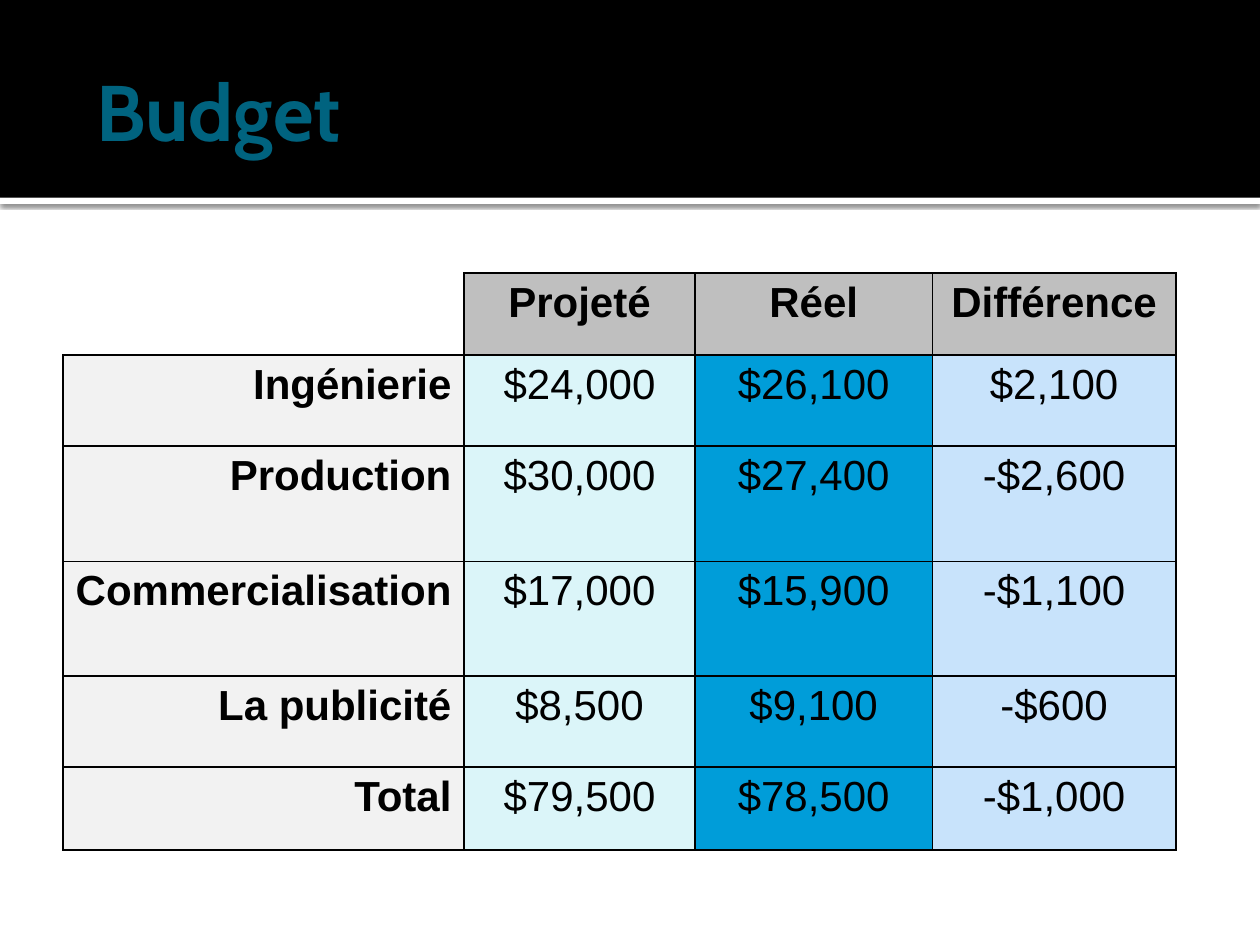
"""Build the budget slide: a black title band above a bordered cost table."""
from dataclasses import dataclass

import pptx
import pptx.dml.color
import pptx.enum.shapes
import pptx.enum.text
import pptx.oxml
import pptx.oxml.ns
import pptx.util
from pptx.dml.color import RGBColor
from pptx.util import Pt

BLACK = RGBColor(0x00, 0x00, 0x00)
WHITE = RGBColor(0xFF, 0xFF, 0xFF)
TEAL = RGBColor(0x00, 0x63, 0x7F)
HEADER_GREY = RGBColor(0xBF, 0xBF, 0xBF)
LABEL_GREY = RGBColor(0xF2, 0xF2, 0xF2)
PALE_CYAN = RGBColor(0xDB, 0xF5, 0xF9)
BLUE = RGBColor(0x00, 0x9D, 0xD9)
PALE_BLUE = RGBColor(0xC8, 0xE3, 0xFB)

ALIGN = pptx.enum.text.PP_ALIGN
ANCHOR = pptx.enum.text.MSO_ANCHOR
NAMESPACE = pptx.oxml.ns.nsdecls("a")
BORDER_WIDTH = Pt(0.96)
BAND_HEIGHT = 113


@dataclass(frozen=True)
class Band:
    top: float
    height: float
    color: RGBColor
    shadow: bool


@dataclass(frozen=True)
class Column:
    heading: str
    width: float
    color: RGBColor
    align: ALIGN
    bold: bool


BANDS = [
    Band(BAND_HEIGHT, 3.6, WHITE, True),
    Band(0, BAND_HEIGHT, BLACK, False),
]
COLUMNS = [
    Column("", 229.2, LABEL_GREY, ALIGN.RIGHT, True),
    Column("Projeté", 132, PALE_CYAN, ALIGN.CENTER, False),
    Column("Réel", 135.6, BLUE, ALIGN.CENTER, False),
    Column("Différence", 139.2, PALE_BLUE, ALIGN.CENTER, False),
]
ROW_HEIGHTS = [46.8, 52, 66, 65.6, 52, 47.4]
COSTS = [
    ("Ingénierie", "$24,000", "$26,100", "$2,100"),
    ("Production", "$30,000", "$27,400", "-$2,600"),
    ("Commercialisation", "$17,000", "$15,900", "-$1,100"),
    ("La publicité", "$8,500", "$9,100", "-$600"),
    ("Total", "$79,500", "$78,500", "-$1,000"),
]


def add_span(para, text: str, font: str, size: float, color: RGBColor, bold: bool) -> None:
    span = para.add_run()
    span.text = text
    span.font.name = font
    span.font.size = Pt(size)
    span.font.bold = bold
    span.font.color.rgb = color


def draw_band(page, band: Band) -> None:
    box = page.shapes.add_shape(
        pptx.enum.shapes.MSO_SHAPE.RECTANGLE, 0, Pt(band.top), Pt(720), Pt(band.height)
    )
    box.fill.solid()
    box.fill.fore_color.rgb = band.color
    box.line.fill.background()
    box.shadow.inherit = False
    if band.shadow:
        effects = box.element.find(".//" + pptx.oxml.ns.qn("a:effectLst"))
        effects.append(pptx.oxml.parse_xml(
            f'<a:outerShdw {NAMESPACE} blurRad="{Pt(2.5)}" dist="{Pt(0.8)}" dir="5400000" '
            f'algn="tl" rotWithShape="0"><a:srgbClr val="{BLACK}"><a:alpha val="60000"/>'
            "</a:srgbClr></a:outerShdw>"
        ))


def draw_title(page, text: str) -> None:
    title = page.shapes.title
    title.element.getparent().append(title.element)
    title.left, title.top, title.width, title.height = Pt(48), Pt(18), Pt(612), Pt(90)
    frame = title.text_frame
    frame.auto_size = pptx.enum.text.MSO_AUTO_SIZE.NONE
    frame.vertical_anchor = ANCHOR.MIDDLE
    frame.margin_left = Pt(7.2)
    frame.margin_top = frame.margin_right = frame.margin_bottom = Pt(3.6)
    para = frame.paragraphs[0]
    para.alignment = ALIGN.LEFT
    add_span(para, text, "Cabin", 45, TEAL, True)


def set_borders(cell, sides: str) -> None:
    properties = cell._tc.get_or_add_tcPr()
    for side in "LRTB":
        paint = f'<a:solidFill><a:srgbClr val="{BLACK}"/></a:solidFill>' if side in sides else "<a:noFill/>"
        properties.append(pptx.oxml.parse_xml(
            f'<a:ln{side} {NAMESPACE} w="{BORDER_WIDTH}">{paint}</a:ln{side}>'
        ))


def fill_cell(cell, text: str, color: RGBColor, align: ALIGN, bold: bool) -> None:
    set_borders(cell, "LRTB")
    cell.fill.solid()
    cell.fill.fore_color.rgb = color
    cell.vertical_anchor = ANCHOR.TOP
    para = cell.text_frame.paragraphs[0]
    para.alignment = align
    para.space_before = Pt(4.8)
    add_span(para, text, "Arial", 24, BLACK, bold)


def draw_table(page) -> None:
    table = page.shapes.add_table(
        len(ROW_HEIGHTS), len(COLUMNS), Pt(36), Pt(156),
        Pt(sum(column.width for column in COLUMNS)), Pt(sum(ROW_HEIGHTS)),
    ).table
    table.first_row = table.horz_banding = False
    for row, height in zip(table.rows, ROW_HEIGHTS):
        row.height = Pt(height)
    for index, column in enumerate(COLUMNS):
        table.columns[index].width = Pt(column.width)
        heading = table.cell(0, index)
        if column.heading:
            fill_cell(heading, column.heading, HEADER_GREY, ALIGN.CENTER, True)
        else:
            set_borders(heading, "RB")
            heading.fill.background()
        for number, cost in enumerate(COSTS, start=1):
            fill_cell(table.cell(number, index), cost[index], column.color, column.align, column.bold)


def main() -> None:
    deck = pptx.Presentation()
    deck.slide_width, deck.slide_height = Pt(720), Pt(540)
    page = deck.slides.add_slide(deck.slide_layouts.get_by_name("Title Only"))
    for band in BANDS:
        draw_band(page, band)
    draw_title(page, "Budget")
    draw_table(page)
    deck.save("out.pptx")


if __name__ == "__main__":
    main()
